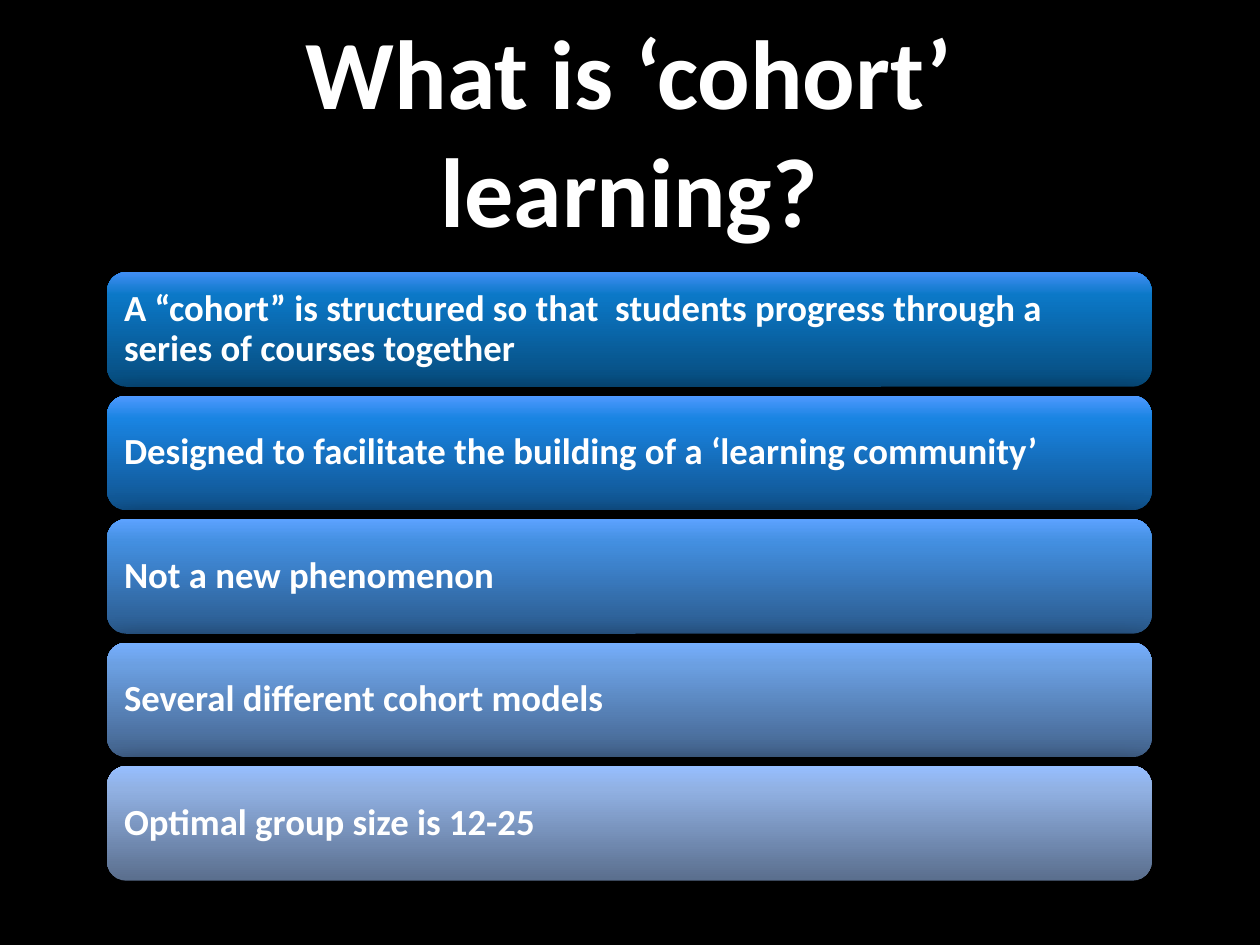
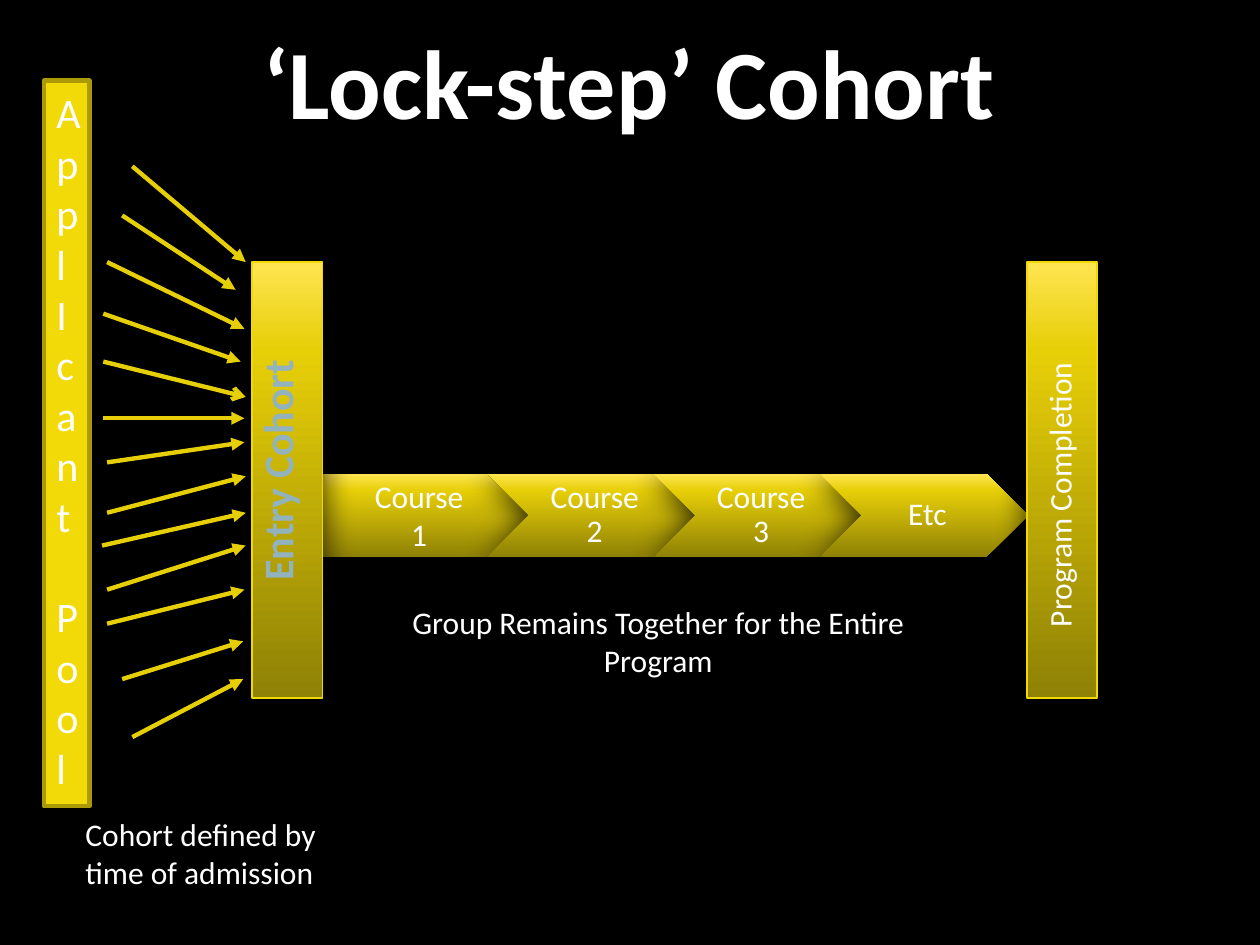
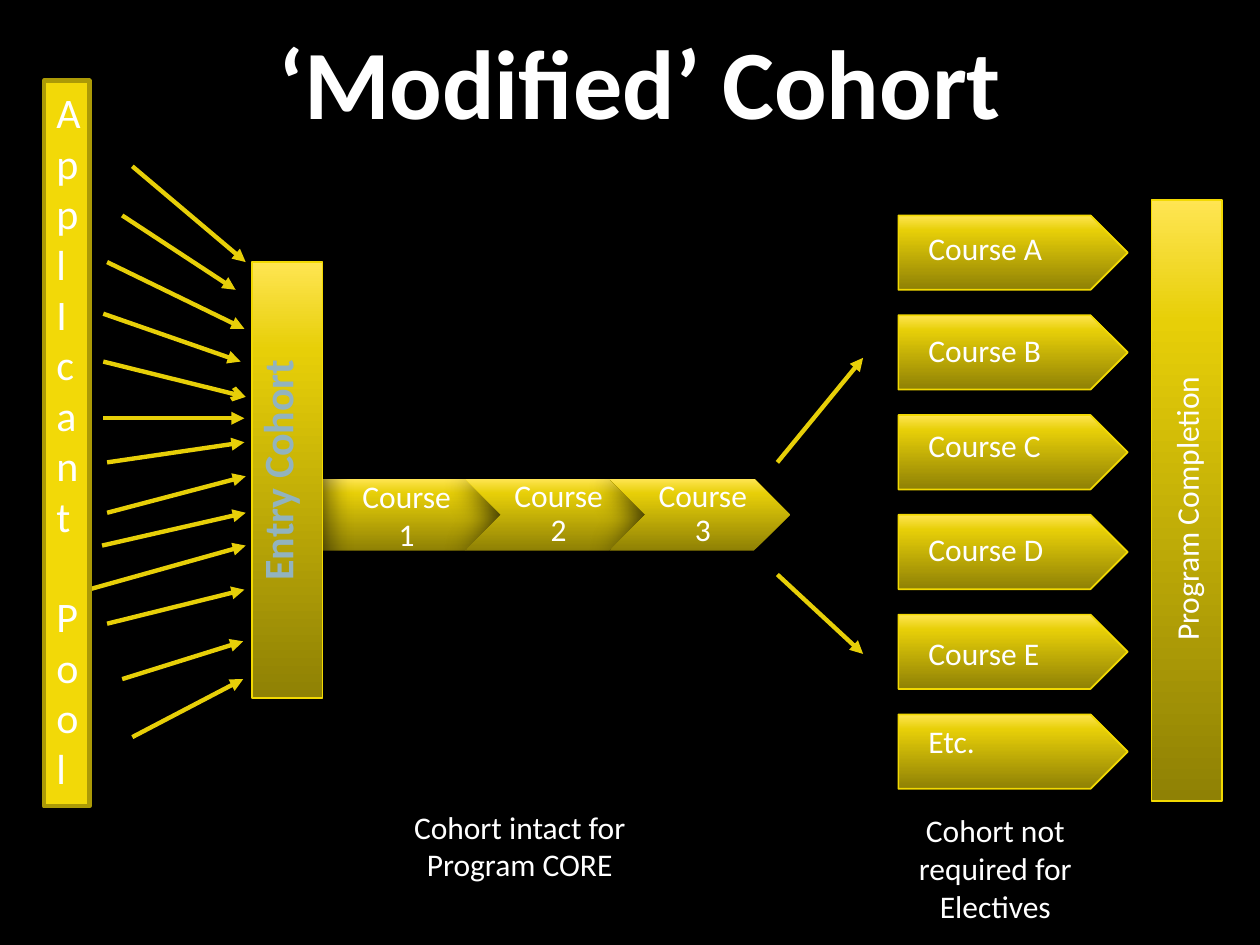
from typing import NamedTuple, Optional

from lxml import etree
from pptx import Presentation
from pptx.dml.color import RGBColor
from pptx.enum.shapes import MSO_CONNECTOR, MSO_SHAPE
from pptx.enum.text import MSO_ANCHOR, MSO_AUTO_SIZE, PP_ALIGN
from pptx.oxml.ns import qn
from pptx.util import Inches, Pt

LEFT, CENTER = PP_ALIGN.LEFT, PP_ALIGN.CENTER
TOP, MIDDLE = MSO_ANCHOR.TOP, MSO_ANCHOR.MIDDLE
FIT_SHAPE, NO_FIT = MSO_AUTO_SIZE.SHAPE_TO_FIT_TEXT, MSO_AUTO_SIZE.NONE
RECTANGLE, ROUNDED = MSO_SHAPE.RECTANGLE, MSO_SHAPE.ROUNDED_RECTANGLE
PENTAGON, CHEVRON = MSO_SHAPE.PENTAGON, MSO_SHAPE.CHEVRON
STRAIGHT = MSO_CONNECTOR.STRAIGHT

FONT = "Calibri"
SLIDE_WIDTH, SLIDE_HEIGHT = Inches(10), Inches(7.5)
COLUMN = SLIDE_WIDTH / 100
ROW = SLIDE_HEIGHT / 75
TITLE_ONLY = 5

COLORS = {
    "background": "000000",
    "text": "FFFFFF",
    "arrow": "E7CF08",
    "edge": "F2D902",
    "pool": "F2D908",
    "pool_edge": "AB9A06",
    "entry": "92B3BE",
    "entry_outline": "BDD4CB",
}
GOLD = ("8F8105", "E7CF08", "FFE552")
GRADIENT_STOPS = (0, 80, 100)


class Box(NamedTuple):
    """A place on the slide, in grid columns and rows."""
    left: float
    top: float
    width: float
    height: float


class Arrow(NamedTuple):
    """Start and end of an arrow, in grid columns and rows."""
    start_x: float
    start_y: float
    end_x: float
    end_y: float
    head: str = "triangle"


class TextStyle(NamedTuple):
    size: float = 18
    color: str = "text"
    bold: bool = False
    align: PP_ALIGN = LEFT
    line_spacing: Optional[float] = None


class Statement(NamedTuple):
    text: str
    gradient: tuple[str, str, str]


class Elective(NamedTuple):
    name: str
    label_top: float


TITLE_STYLE = TextStyle(56, bold=True, align=CENTER)
STATEMENT_STYLE = TextStyle(21, bold=True, line_spacing=0.9)
ENTRY_STYLE = TextStyle(24, "entry", True, CENTER)
POOL_STYLE = TextStyle(24)
LABEL_STYLE = TextStyle()
CAPTION_STYLE = TextStyle(align=CENTER)
STEP_STYLE = TextStyle(align=CENTER, line_spacing=0.9)

DIAGRAM_TITLE = Box(8.5, 0.9, 82.9, 11)
POOL_BAR = Box(3.5, 6.4, 3.6, 57.6)
ENTRY_BAR = Box(20, 20.8, 5.6, 34.6)
ENTRY_LABEL = Box(5.4, 34.8, 33.1, 5)

STATEMENTS = (
    Statement("A “cohort” is structured so that  students progress through a series of courses together",
              ("074B7C", "0B78C7", "408EF4")),
    Statement("Designed to facilitate the building of a ‘learning community’",
              ("10528C", "1984E2", "4F99FF")),
    Statement("Not a new phenomenon", ("2A598B", "438FE0", "5CA2FF")),
    Statement("Several different cohort models", ("42628B", "6B9FE1", "76AFFF")),
    Statement("Optimal group size is 12-25", ("5A6E8D", "91B1E3", "96BEFF")),
)
APPLICANT_ARROWS = (
    Arrow(10.5, 13.2, 19.5, 20.8),
    Arrow(9.7, 17.1, 18.7, 23),
    Arrow(8.5, 20.8, 19.4, 26.1),
    Arrow(8.2, 24.9, 19.1, 28.7),
    Arrow(8.2, 28.7, 19.5, 31.5, "arrow"),
    Arrow(8.2, 33.2, 19.4, 33.2),
    Arrow(8.5, 36.7, 19.4, 35.1),
    Arrow(8.5, 40.7, 19.5, 37.8),
    Arrow(8.1, 43.3, 19.5, 40.7),
    Arrow(8.5, 49.5, 19.4, 46.8),
    Arrow(9.7, 53.9, 19.3, 50.9),
    Arrow(10.5, 58.5, 19.3, 53.9),
)
ELECTIVE_ARROWS = (Arrow(61.7, 36.7, 68.5, 28.4), Arrow(61.7, 45.6, 68.5, 51.9))
ELECTIVES = (
    Elective("Course A", 17.7),
    Elective("Course B", 25.8),
    Elective("Course C", 33.3),
    Elective("Course D", 41.6),
    Elective("Course E", 49.8),
    Elective("Etc.", 56.8),
)


def rgb(name: str) -> RGBColor:
    return RGBColor.from_string(COLORS[name])


def place(box: Box) -> tuple[int, int, int, int]:
    return (round(box.left * COLUMN), round(box.top * ROW),
            round(box.width * COLUMN), round(box.height * ROW))


def write(text_frame, text: str, style: TextStyle, anchor=TOP, fit=NO_FIT) -> None:
    text_frame.text = text
    text_frame.word_wrap = True
    text_frame.auto_size = fit
    text_frame.vertical_anchor = anchor
    for paragraph in text_frame.paragraphs:
        paragraph.alignment = style.align
        if style.line_spacing:
            paragraph.line_spacing = style.line_spacing
        for run in paragraph.runs:
            run.font.name = FONT
            run.font.size = Pt(style.size)
            run.font.bold = style.bold
            run.font.color.rgb = rgb(style.color)


def set_margins(text_frame, left: float, top: float, right: float, bottom: float) -> None:
    text_frame.margin_left, text_frame.margin_top = Inches(left), Inches(top)
    text_frame.margin_right, text_frame.margin_bottom = Inches(right), Inches(bottom)


def add_color(parent, color: str):
    return etree.SubElement(parent, qn("a:srgbClr"), val=color)


def add_glossy_shape(slide, kind, box: Box, gradient=GOLD, edge: bool = False):
    """Add a shape with a three-stop upward gradient and a soft shadow."""
    shape = slide.shapes.add_shape(kind, *place(box))
    shape.fill.gradient()
    shape.fill.gradient_angle = 90
    properties = shape._element.spPr
    stop_list = properties.find(".//" + qn("a:gsLst"))
    for stop in list(stop_list):
        stop_list.remove(stop)
    for position, color in zip(GRADIENT_STOPS, gradient):
        stop = etree.SubElement(stop_list, qn("a:gs"), pos=str(position * 1000))
        add_color(stop, color)
    if edge:
        shape.line.color.rgb = rgb("edge")
        shape.line.width = Pt(1)
    else:
        shape.line.fill.background()
    shape.shadow.inherit = False
    shadow = etree.SubElement(
        properties.find(qn("a:effectLst")), qn("a:outerShdw"),
        blurRad=str(Pt(18)), dist=str(Pt(3)), dir="5400000", rotWithShape="0")
    etree.SubElement(add_color(shadow, COLORS["background"]), qn("a:alpha"), val="80000")
    return shape


def add_label(slide, box: Box, text: str, style: TextStyle = LABEL_STYLE, rotation: int = 0):
    label = slide.shapes.add_textbox(*place(box))
    label.rotation = rotation
    write(label.text_frame, text, style, fit=FIT_SHAPE)
    return label


def add_arrow(slide, arrow: Arrow) -> None:
    connector = slide.shapes.add_connector(
        STRAIGHT, round(arrow.start_x * COLUMN), round(arrow.start_y * ROW),
        round(arrow.end_x * COLUMN), round(arrow.end_y * ROW))
    connector.line.color.rgb = rgb("arrow")
    connector.line.width = Pt(2.5)
    properties = connector._element.spPr
    etree.SubElement(properties.find(qn("a:ln")), qn("a:tailEnd"), type=arrow.head)
    etree.SubElement(properties, qn("a:effectLst"))


def add_titled_slide(presentation, title: str, box: Box):
    slide = presentation.slides.add_slide(presentation.slide_layouts[TITLE_ONLY])
    shape = slide.shapes.title
    shape.left, shape.top, shape.width, shape.height = place(box)
    write(shape.text_frame, title, TITLE_STYLE, MIDDLE)
    return slide


def add_course_chain(slide, first: Box, names: tuple[str, ...]) -> None:
    """Add interlocking steps, each overlapping a fifth of the one before."""
    for index, name in enumerate(names):
        box = first._replace(left=first.left + index * first.width * 0.8)
        step = add_glossy_shape(slide, CHEVRON if index else PENTAGON, box)
        set_margins(step.text_frame, 0.08 if index else 0.1, 0.05, 0.03, 0.05)
        write(step.text_frame, name, STEP_STYLE if index else CAPTION_STYLE, MIDDLE)


def add_entry(slide, long_arrow_start: float) -> None:
    """Add the applicant pool, its arrows and the entry cohort bar."""
    add_glossy_shape(slide, RECTANGLE, ENTRY_BAR, edge=True)
    label = add_label(slide, ENTRY_LABEL, "Entry Cohort", ENTRY_STYLE, 270)
    run_properties = label.text_frame.paragraphs[0].runs[0].font._element
    outline = etree.Element(qn("a:ln"), w=str(Pt(1)))
    add_color(etree.SubElement(outline, qn("a:solidFill")), COLORS["entry_outline"])
    run_properties.insert(0, outline)

    for arrow in (*APPLICANT_ARROWS, Arrow(long_arrow_start, 46.8, 19.5, 43.3)):
        add_arrow(slide, arrow)

    pool = slide.shapes.add_shape(RECTANGLE, *place(POOL_BAR))
    pool.shadow.inherit = False
    pool.fill.solid()
    pool.fill.fore_color.rgb = rgb("pool")
    pool.line.color.rgb = rgb("pool_edge")
    pool.line.width = Pt(2.5)
    write(pool.text_frame, "Appl\nIcant\n Pool", POOL_STYLE, fit=FIT_SHAPE)


def add_completion(slide, bar: Box, label: Box) -> None:
    add_glossy_shape(slide, RECTANGLE, bar, edge=True)
    add_label(slide, label, "Program Completion", rotation=270)


def build_definition(presentation) -> None:
    slide = add_titled_slide(presentation, "What is ‘cohort’ learning?", Box(8.5, 1.2, 82.9, 18.1))
    for index, statement in enumerate(STATEMENTS):
        box = Box(8.5, 21.6 + index * 9.8, 82.9, 9.1)
        panel = add_glossy_shape(slide, ROUNDED, box, statement.gradient)
        set_margins(panel.text_frame, 0.09, 0.09, 0.09, 0.09)
        write(panel.text_frame, statement.text, STATEMENT_STYLE, MIDDLE)


def build_lock_step(presentation) -> None:
    slide = add_titled_slide(presentation, "‘Lock-step’ Cohort", DIAGRAM_TITLE)
    add_course_chain(slide, Box(25.5, 37.6, 16.5, 6.6), ("Course\n1", "Course 2", "Course 3", "Etc"))
    add_entry(slide, 8.5)
    add_completion(slide, Box(81.5, 20.8, 5.6, 34.6), Box(70, 34.7, 28.1, 4))
    add_label(slide, Box(29, 47.4, 46.5, 7.1),
              "Group Remains Together for the Entire Program", CAPTION_STYLE)
    add_label(slide, Box(5.8, 64.2, 21, 7.1), "Cohort defined by time of admission")


def build_modified(presentation) -> None:
    slide = add_titled_slide(presentation, " ‘Modified’ Cohort", DIAGRAM_TITLE)
    add_course_chain(slide, Box(25.5, 38, 14.3, 5.7), ("Course\n1", "Course 2", "Course 3"))
    add_entry(slide, 7)
    add_completion(slide, Box(91.4, 15.9, 5.6, 47.7), Box(80.1, 35.8, 28.1, 4))
    add_label(slide, Box(28.9, 63.6, 24.7, 7.1), "Cohort intact for Program CORE", CAPTION_STYLE)
    add_label(slide, Box(68.5, 63.9, 21, 10.1), "Cohort not required for Electives", CAPTION_STYLE)
    for index, elective in enumerate(ELECTIVES):
        add_glossy_shape(slide, PENTAGON, Box(71.3, 17.1 + index * 7.92, 18.2, 5.9), edge=True)
        add_label(slide, Box(72.7, elective.label_top, 13.9, 4), elective.name)
    for arrow in ELECTIVE_ARROWS:
        add_arrow(slide, arrow)


def main() -> None:
    presentation = Presentation()
    presentation.slide_width, presentation.slide_height = SLIDE_WIDTH, SLIDE_HEIGHT
    background = presentation.slide_master.background.fill
    background.solid()
    background.fore_color.rgb = rgb("background")
    build_definition(presentation)
    build_lock_step(presentation)
    build_modified(presentation)
    presentation.save("out.pptx")


if __name__ == "__main__":
    main()
